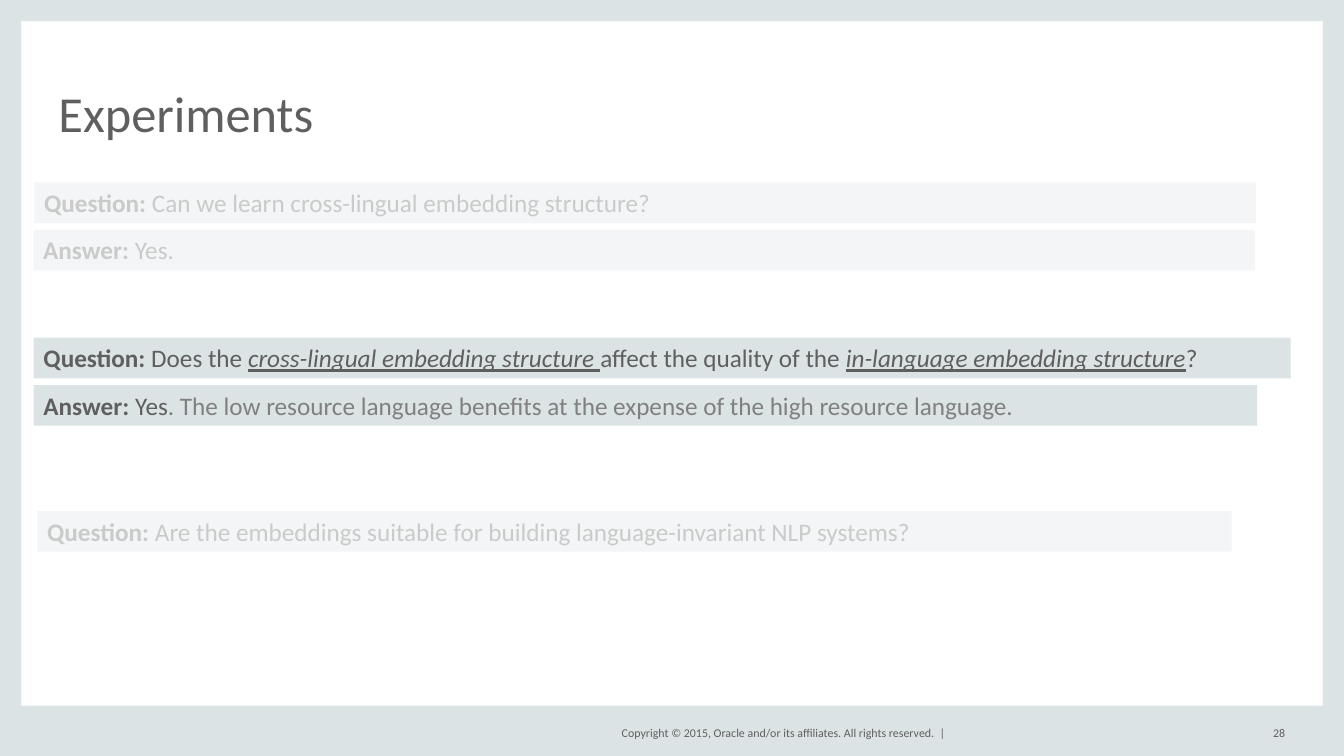
from dataclasses import dataclass

import pptx
import pptx.dml.color
import pptx.enum.shapes
import pptx.enum.text
import pptx.oxml
import pptx.oxml.ns
import pptx.util

Pt = pptx.util.Pt
RGB = pptx.dml.color.RGBColor
ALIGN = pptx.enum.text.PP_ALIGN
ANCHOR = pptx.enum.text.MSO_ANCHOR
AUTO = pptx.enum.text.MSO_AUTO_SIZE
RECT = pptx.enum.shapes.MSO_SHAPE.RECTANGLE

MIST = RGB(0xDC, 0xE3, 0xE4)
SLATE = RGB(0x5F, 0x5F, 0x5F)
GRAY = RGB(0x80, 0x80, 0x80)
WHITE = RGB(0xFF, 0xFF, 0xFF)

WIDE, HIGH = 960, 540
EDGE = 15.12
FOOT = 36

BOLD = {"bold": True}
STRESS = {"italic": True, "underline": True}
PALE = {"color": GRAY}


@dataclass
class Box:
    left: float
    top: float
    width: float
    height: float


@dataclass
class Run:
    text: str
    form: dict


@dataclass
class Bar:
    left: float
    top: float
    width: float
    runs: list[Run]


@dataclass
class Label:
    box: Box
    text: str
    size: float
    frame: dict
    para: dict


FRAME = [
    Box(0, 0, EDGE, HIGH),
    Box(WIDE - EDGE, 0, EDGE, HIGH),
    Box(0, HIGH - FOOT, WIDE, FOOT),
    Box(0, 0, WIDE, EDGE),
]

SMALL = {"vertical_anchor": ANCHOR.MIDDLE, "word_wrap": False}
RIGHT = {"alignment": ALIGN.RIGHT}
LABELS = [
    Label(Box(423.36, 516.24, 252, 14.4),
          "Copyright © 2015, Oracle and/or its affiliates. All rights reserved.  |",
          8.5, SMALL, RIGHT),
    Label(Box(41.76, 31.68, 876.24, 69.84), "Experiments", 36,
          {"vertical_anchor": ANCHOR.BOTTOM, "word_wrap": True},
          {"alignment": ALIGN.LEFT, "line_spacing": 0.8}),
    Label(Box(887.76, 516.24, 30.24, 14.4), "28", 8.5, SMALL, RIGHT),
]

BARS = [
    Bar(23.76, 164.16, 872.64, [Run("Answer:", BOLD), Run(" Yes.", {})]),
    Bar(24, 275.04, 874.08, [
        Run("Answer: ", BOLD),
        Run("Yes", {}),
        Run(". The low resource language benefits at the expense of "
            "the high resource language.", PALE),
    ]),
    Bar(24.48, 130.32, 872.64, [
        Run("Question: ", BOLD),
        Run("Can we learn cross-lingual embedding structure?", {}),
    ]),
    Bar(24, 241.2, 897.84, [
        Run("Question: ", BOLD),
        Run("Does the ", {}),
        Run("cross-lingual embedding structure ", STRESS),
        Run("affect the quality of the ", {}),
        Run("in-language embedding structure", STRESS),
        Run("?", {}),
    ]),
    Bar(26.64, 365.04, 853.2, [
        Run("Question: ", BOLD),
        Run("Are the embeddings suitable for building "
            "language-invariant NLP systems?", {}),
    ]),
]

VEILS = [Box(20.16, 352.8, 922.32, 90.72), Box(18.72, 113.04, 922.32, 90.72)]


def apply(target: object, form: dict) -> None:
    for name, value in form.items():
        setattr(target, name, value)


def place(box: Box) -> list:
    return [Pt(n) for n in (box.left, box.top, box.width, box.height)]


def write(para, run: Run, size: float) -> None:
    form = {"name": "Calibri", "size": Pt(size), "bold": False, **run.form}
    tint = form.pop("color", SLATE)
    piece = para.add_run()
    piece.text = run.text
    apply(piece.font, form)
    piece.font.color.rgb = tint


def draw_rect(slide, box: Box, fill: RGB):
    shape = slide.shapes.add_shape(RECT, *place(box))
    shape.shadow.inherit = False
    shape.fill.solid()
    shape.fill.fore_color.rgb = fill
    shape.line.fill.background()
    return shape


def draw_label(slide, label: Label) -> None:
    frame = slide.shapes.add_textbox(*place(label.box)).text_frame
    sides = ("left", "top", "right", "bottom")
    apply(frame, {f"margin_{side}": 0 for side in sides} | label.frame)
    para = frame.paragraphs[0]
    apply(para, label.para)
    write(para, Run(label.text, {}), label.size)


def draw_bar(slide, bar: Bar) -> None:
    shape = draw_rect(slide, Box(bar.left, bar.top, bar.width, 29.08), MIST)
    frame = shape.text_frame
    apply(frame, {"word_wrap": True, "vertical_anchor": ANCHOR.TOP,
                  "auto_size": AUTO.SHAPE_TO_FIT_TEXT})
    para = frame.paragraphs[0]
    para.alignment = ALIGN.LEFT
    for run in bar.runs:
        write(para, run, 18)


def draw_veil(slide, box: Box) -> None:
    shape = draw_rect(slide, box, WHITE)
    tag = pptx.oxml.ns.qn("a:srgbClr")
    tint = next(shape.fill._xPr.iter(tag))
    tint.append(pptx.oxml.parse_xml(
        f'<a:alpha {pptx.oxml.ns.nsdecls("a")} val="67000"/>'))
    shape.line.color.rgb = WHITE
    shape.line.width = Pt(1.5)


def main() -> None:
    deck = pptx.Presentation()
    apply(deck, {"slide_width": Pt(WIDE), "slide_height": Pt(HIGH)})
    slide = deck.slides.add_slide(deck.slide_layouts[6])
    for box in FRAME:
        draw_rect(slide, box, MIST)
    for label in LABELS:
        draw_label(slide, label)
    for bar in BARS:
        draw_bar(slide, bar)
    for box in VEILS:
        draw_veil(slide, box)
    deck.save("out.pptx")


if __name__ == "__main__":
    main()
